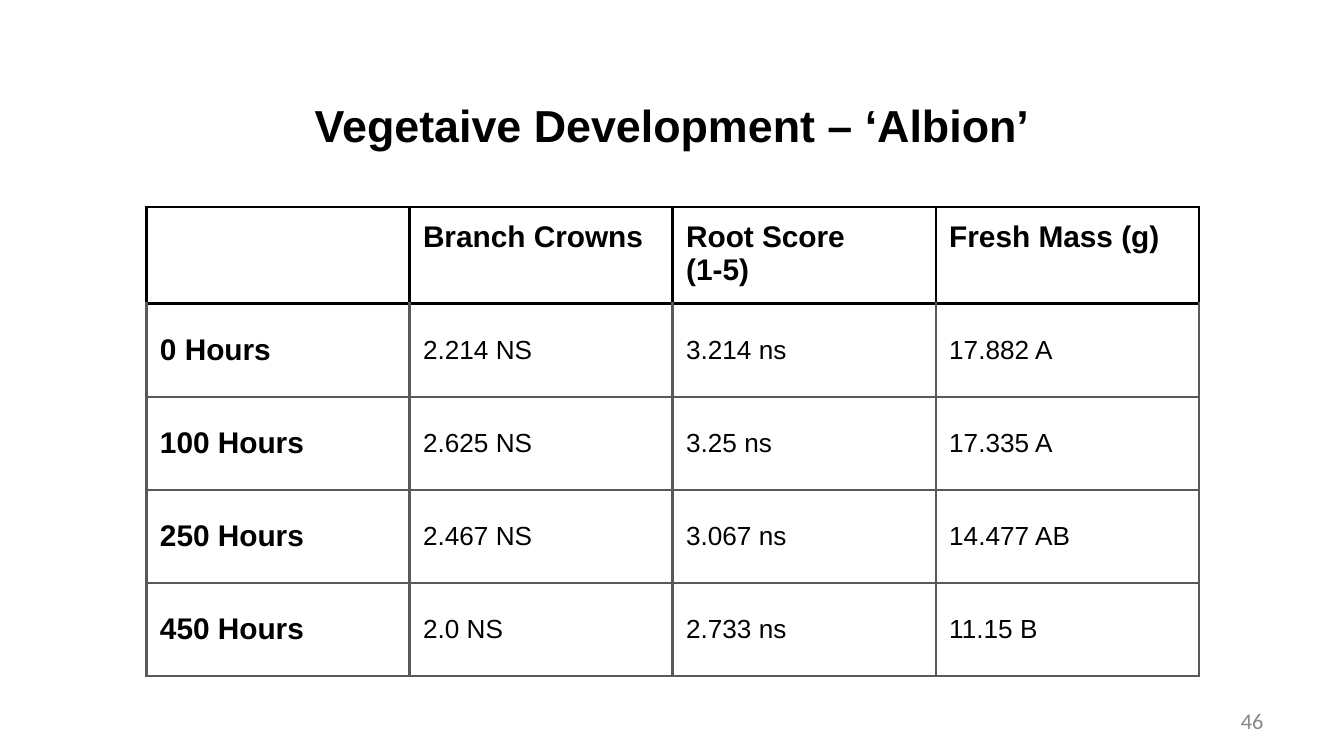
"""Build a slide with a table of vegetative development by chilling hours."""
from lxml import etree
from pptx import Presentation
from pptx.dml.color import RGBColor
from pptx.enum.text import MSO_ANCHOR, PP_ALIGN
from pptx.oxml.ns import qn
from pptx.util import Inches, Pt

TOP, MIDDLE = MSO_ANCHOR.TOP, MSO_ANCHOR.MIDDLE
LEFT, CENTER, RIGHT = PP_ALIGN.LEFT, PP_ALIGN.CENTER, PP_ALIGN.RIGHT

TITLE = "Vegetaive Development – ‘Albion’"
PAGE_NUMBER = "46"
ROWS = [
    ("", "Branch Crowns", "Root Score\n(1-5)", "Fresh Mass (g)"),
    ("0 Hours", "2.214 NS", "3.214 ns", "17.882 A"),
    ("100 Hours", "2.625 NS", "3.25 ns", "17.335 A"),
    ("250 Hours", "2.467 NS", "3.067 ns", "14.477 AB"),
    ("450 Hours", "2.0 NS", "2.733 ns", "11.15 B"),
]
TABLE_WIDTH, TABLE_HEIGHT, HEADER_HEIGHT = 7.83, 3.49, 0.72
CELL_MARGIN = 0.1
THEME = {
    "font": "Arial", "number_font": "Calibri",
    "ink": "000000", "grid": "595959", "muted": "888888",
    "title": 24, "label": 16, "value": 14, "number": 12, "border": 1.5,
}


def write(frame, text, size, bold=False, align=LEFT, font="font", color="ink"):
    frame.text = text
    for para in frame.paragraphs:
        para.alignment = align
        para.font.name = THEME[font]
        para.font.size = Pt(THEME[size])
        para.font.bold = bold
        para.font.color.rgb = RGBColor.from_string(THEME[color])


def set_borders(cell, colors):
    properties = cell._tc.get_or_add_tcPr()
    for index, (side, color) in enumerate(colors.items()):
        line = etree.Element(qn(f"a:ln{side}"), w=str(Pt(THEME["border"])))
        fill = etree.SubElement(line, qn("a:solidFill"))
        etree.SubElement(fill, qn("a:srgbClr"), val=THEME[color])
        properties.insert(index, line)


def add_results(page):
    column_count = len(ROWS[0])
    row_height = (TABLE_HEIGHT - HEADER_HEIGHT) / (len(ROWS) - 1)
    table = page.shapes.add_table(
        len(ROWS), column_count, Inches(1.09), Inches(1.54),
        Inches(TABLE_WIDTH), Inches(TABLE_HEIGHT)).table
    table.first_row = table.horz_banding = False
    for column in table.columns:
        column.width = Inches(TABLE_WIDTH / column_count)
    for r, texts in enumerate(ROWS):
        header = r == 0
        table.rows[r].height = Inches(HEADER_HEIGHT if header else row_height)
        for c, text in enumerate(texts):
            cell = table.cell(r, c)
            cell.margin_left = cell.margin_right = Inches(CELL_MARGIN)
            cell.margin_top = cell.margin_bottom = Inches(CELL_MARGIN)
            cell.vertical_anchor = TOP if header else MIDDLE
            label = header or c == 0
            write(cell.text_frame, text, "label" if label else "value", label)
            cell.fill.background()
            color = "ink" if header else "grid"
            set_borders(cell, {"L": color, "R": color,
                               "T": "ink" if r <= 1 else "grid", "B": color})


def place(shape, left, top, width, height):
    shape.left, shape.top = Inches(left), Inches(top)
    shape.width, shape.height = Inches(width), Inches(height)
    shape.text_frame.word_wrap = True
    shape.text_frame.vertical_anchor = MIDDLE


def main():
    deck = Presentation()
    deck.slide_width = Inches(10)
    deck.slide_height = deck.slide_width * 9 // 16
    page = deck.slides.add_slide(deck.slide_layouts[5])

    title = page.shapes.title
    place(title, 0.5, 0.49, 9, 0.88)
    write(title.text_frame, TITLE, "title", True, CENTER)

    add_results(page)

    number = page.shapes.add_textbox(0, 0, 0, 0)
    place(number, 7.17, 5.21, 2.33, 0.3)
    write(number.text_frame, PAGE_NUMBER, "number", align=RIGHT,
          font="number_font", color="muted")
    deck.save("out.pptx")


if __name__ == "__main__":
    main()
